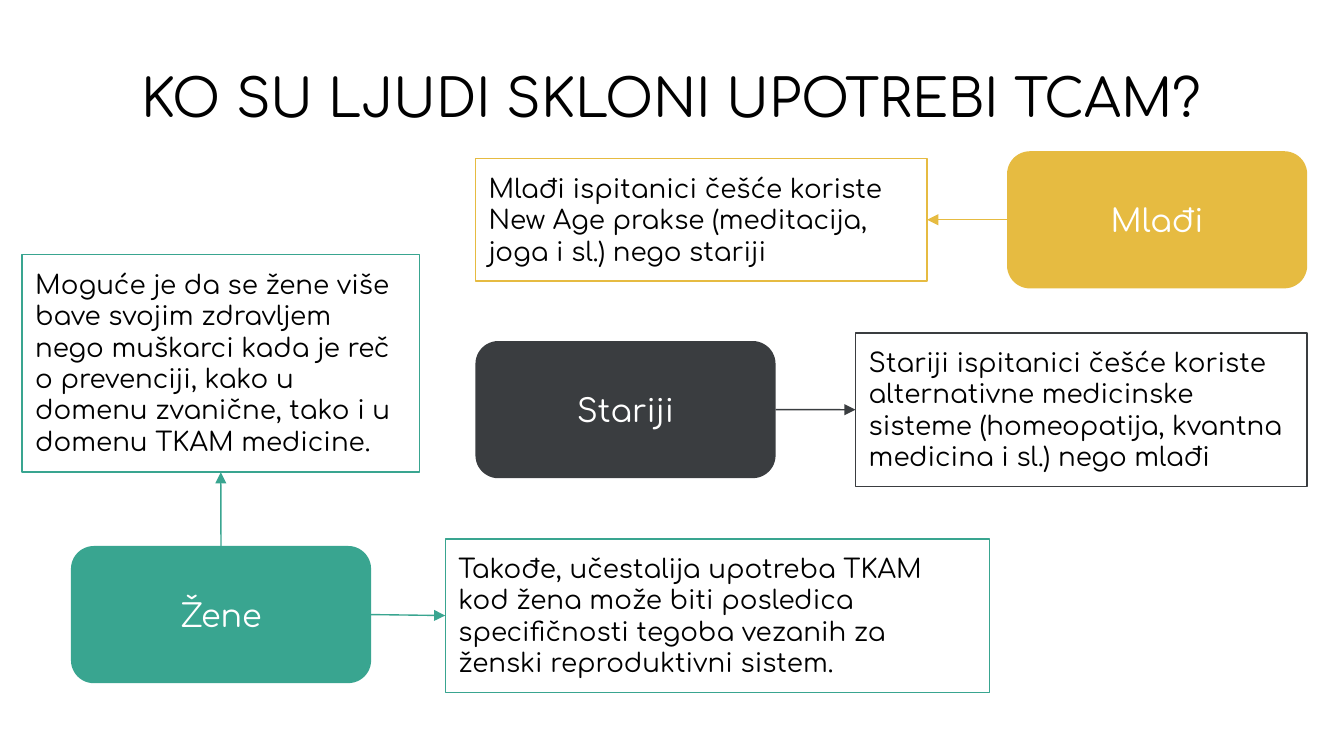
from dataclasses import dataclass
from enum import IntEnum

from lxml.etree import SubElement
from pptx import Presentation
from pptx.dml.color import RGBColor
from pptx.enum.shapes import MSO_CONNECTOR, MSO_SHAPE
from pptx.enum.text import MSO_ANCHOR, PP_ALIGN
from pptx.oxml.ns import qn
from pptx.shapes.autoshape import Shape
from pptx.shapes.shapetree import SlideShapes
from pptx.text.text import TextFrame
from pptx.util import Pt

FONT = "Comfortaa"
BLACK = RGBColor(0x00, 0x00, 0x00)
WHITE = RGBColor(0xFF, 0xFF, 0xFF)
GREEN = RGBColor(0x39, 0xA5, 0x90)
YELLOW = RGBColor(0xE6, 0xBB, 0x41)
CHARCOAL = RGBColor(0x3A, 0x3D, 0x40)

GROUP_WIDTH, GROUP_HEIGHT = 160.8, 73.5
INSET = 7.2
LINE_WIDTH = 0.75


class Side(IntEnum):
    """Connection sites of a rectangle."""
    TOP = 0
    LEFT = 1
    BOTTOM = 2
    RIGHT = 3


OPPOSITE = {Side.TOP: Side.BOTTOM, Side.LEFT: Side.RIGHT, Side.RIGHT: Side.LEFT}


@dataclass(frozen=True)
class Finding:
    text: str
    left: float
    top: float
    width: float
    height: float
    exit_side: Side  # side of the group where the arrow starts


@dataclass(frozen=True)
class Group:
    label: str
    left: float
    top: float
    color: RGBColor
    findings: tuple[Finding, ...]


GROUPS = (
    Group("Žene", 38, 292.5, GREEN, (
        Finding("Takođe, učestalija upotreba TKAM kod žena može biti posledica "
                "specifičnosti tegoba vezanih za ženski reproduktivni sistem.",
                238.5, 288.7, 291.6, 82.2, Side.RIGHT),
        Finding("Moguće je da se žene više bave svojim zdravljem nego muškarci "
                "kada je reč o prevenciji, kako u domenu zvanične, tako i u "
                "domenu TKAM medicine.",
                11.8, 136.5, 213, 116.5, Side.TOP),
    )),
    Group("Mlađi", 539.5, 81, YELLOW, (
        Finding("Mlađi ispitanici češće koriste New Age prakse (meditacija, "
                "joga i sl.) nego stariji",
                254.7, 85, 242, 65.5, Side.LEFT),
    )),
    Group("Stariji", 254.7, 182.7, CHARCOAL, (
        Finding("Stariji ispitanici češće koriste alternativne medicinske "
                "sisteme (homeopatija, kvantna medicina i sl.) nego mlađi",
                458.3, 178.4, 242, 82.2, Side.RIGHT),
    )),
)


def write(frame: TextFrame, text: str, size: float, color: RGBColor,
          align: PP_ALIGN = PP_ALIGN.LEFT,
          anchor: MSO_ANCHOR = MSO_ANCHOR.TOP) -> None:
    frame.word_wrap = True
    frame.vertical_anchor = anchor
    frame.margin_left = frame.margin_right = Pt(INSET)
    frame.margin_top = frame.margin_bottom = Pt(INSET)
    paragraph = frame.paragraphs[0]
    paragraph.alignment = align
    run = paragraph.add_run()
    run.text = text
    run.font.name = FONT
    run.font.size = Pt(size)
    run.font.color.rgb = color


def draw_group(shapes: SlideShapes, group: Group) -> Shape:
    box = shapes.add_shape(MSO_SHAPE.ROUNDED_RECTANGLE, Pt(group.left),
                           Pt(group.top), Pt(GROUP_WIDTH), Pt(GROUP_HEIGHT))
    box.shadow.inherit = False
    box.fill.solid()
    box.fill.fore_color.rgb = group.color
    box.line.fill.background()
    write(box.text_frame, group.label, 17, WHITE, PP_ALIGN.CENTER, MSO_ANCHOR.MIDDLE)
    return box


def draw_finding(shapes: SlideShapes, finding: Finding, color: RGBColor) -> Shape:
    box = shapes.add_shape(MSO_SHAPE.RECTANGLE, Pt(finding.left), Pt(finding.top),
                           Pt(finding.width), Pt(finding.height))
    box.shadow.inherit = False
    box.fill.background()
    box.line.color.rgb = color
    box.line.width = Pt(LINE_WIDTH)
    write(box.text_frame, finding.text, 14, BLACK)
    return box


def draw_arrow(shapes: SlideShapes, start: Shape, end: Shape, side: Side,
               color: RGBColor) -> None:
    arrow = shapes.add_connector(MSO_CONNECTOR.STRAIGHT, Pt(0), Pt(0), Pt(0), Pt(0))
    arrow.begin_connect(start, int(side))
    arrow.end_connect(end, int(OPPOSITE[side]))
    arrow.line.color.rgb = color
    arrow.line.width = Pt(LINE_WIDTH)
    SubElement(arrow.line._get_or_add_ln(), qn("a:tailEnd"), type="triangle")
    SubElement(arrow._element.spPr, qn("a:effectLst"))


def main() -> None:
    deck = Presentation()
    deck.slide_width, deck.slide_height = Pt(720), Pt(405)
    shapes = deck.slides.add_slide(deck.slide_layouts[6]).shapes

    # Title
    title = shapes.add_textbox(Pt(68.5), Pt(28), Pt(643.5), Pt(49))
    write(title.text_frame, "KO SU LJUDI SKLONI UPOTREBI TCAM?", 28, BLACK)

    # Groups of respondents, each with arrows to its findings
    for group in GROUPS:
        group_box = draw_group(shapes, group)
        for finding in group.findings:
            finding_box = draw_finding(shapes, finding, group.color)
            draw_arrow(shapes, group_box, finding_box, finding.exit_side, group.color)

    deck.save("out.pptx")


if __name__ == "__main__":
    main()
